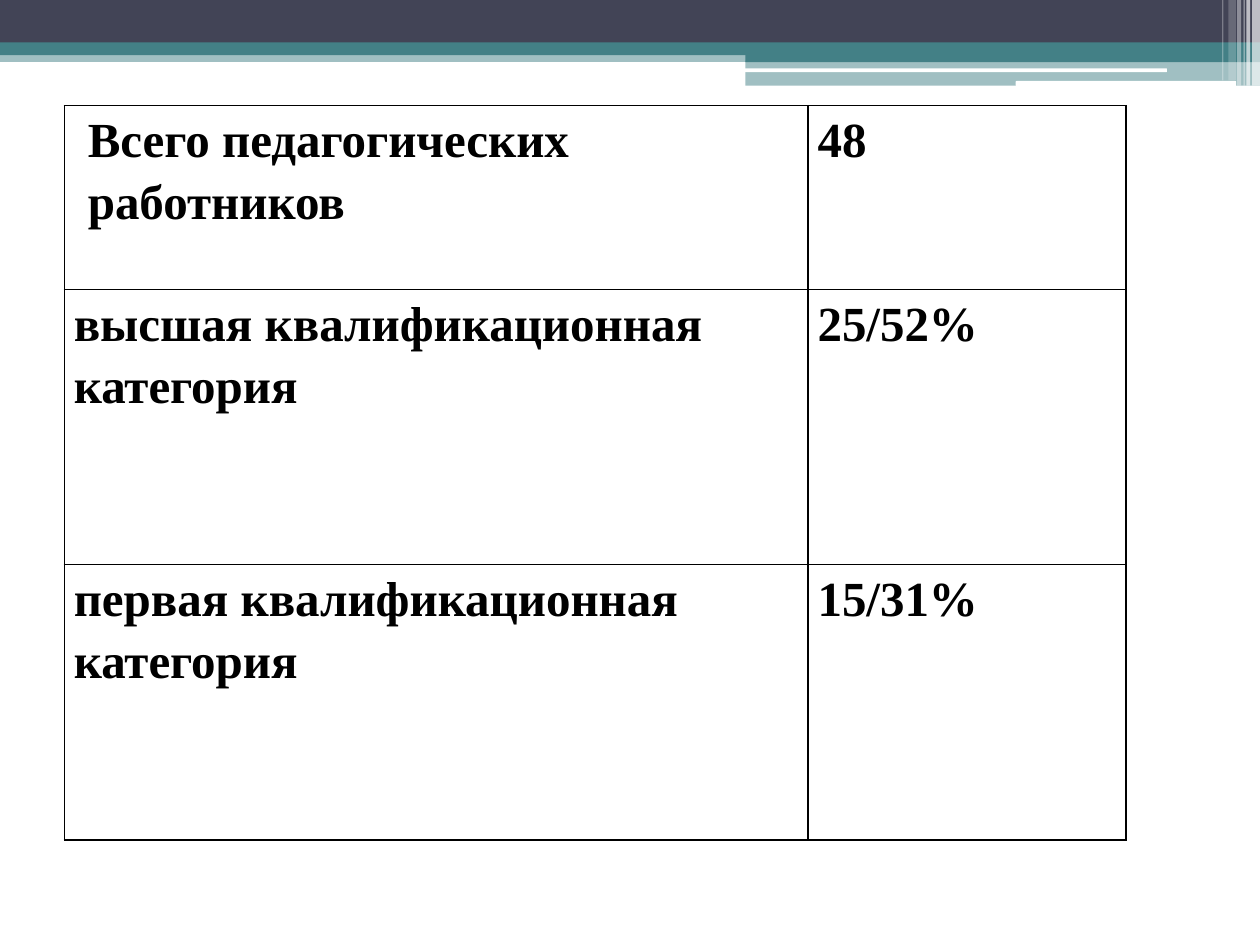
from lxml.etree import SubElement
from pptx import Presentation
from pptx.dml.color import RGBColor
from pptx.enum.shapes import MSO_SHAPE
from pptx.oxml.ns import qn
from pptx.util import Pt

SLATE, TEAL, WHITE, BLACK = "424456", "438086", "FFFFFF", "000000"


def paint(fill, color, opacity=100):
    """Fill with a solid colour at the given opacity in percent."""
    fill.solid()
    fill.fore_color.rgb = RGBColor.from_string(color)
    if opacity < 100:
        color_element = fill._xPr.find(qn("a:solidFill"))[0]
        SubElement(color_element, qn("a:alpha"), val=str(opacity * 1000))


def add_borders(cell, color, width):
    properties = cell._tc.get_or_add_tcPr()
    for index, side in enumerate(("lnL", "lnR", "lnT", "lnB")):
        line = SubElement(properties, qn(f"a:{side}"), w=str(Pt(width)))
        solid = SubElement(line, qn("a:solidFill"))
        SubElement(solid, qn("a:srgbClr"), val=color)
        properties.insert(index, line)  # borders precede the fill


presentation = Presentation()
presentation.slide_width, presentation.slide_height = Pt(720), Pt(540)
slide = presentation.slides.add_slide(presentation.slide_layouts[6])

# Header bands and the fading stripes in the right corner
RECTANGLE, ROUNDED = MSO_SHAPE.RECTANGLE, MSO_SHAPE.ROUNDED_RECTANGLE
header_parts = [
    (RECTANGLE, 0, 28.8, 720, 6.6, TEAL, 50),
    (RECTANGLE, 0, 0, 720, 24.5, SLATE, 100),
    (RECTANGLE, 0, 24.3, 720, 7.2, TEAL, 100),
    (RECTANGLE, 426, 28.4, 294, 7.1, TEAL, 100),
    (RECTANGLE, 426, 34.7, 294, 14.2, TEAL, 50),
    (ROUNDED, 425.6, 39.1, 241.2, 2.2, WHITE, 100),
    (ROUNDED, 580.4, 46.3, 126, 2.9, WHITE, 100),
    (RECTANGLE, 715.5, 0, 4.5, 49, WHITE, 65),
    (RECTANGLE, 712.2, 0, 2.2, 49, WHITE, 65),
    (RECTANGLE, 710.6, 0, 0.7, 49, WHITE, 60),
    (RECTANGLE, 707, 0, 2.2, 49, WHITE, 40),
    (RECTANGLE, 702, 0, 4.3, 46, WHITE, 20),
    (RECTANGLE, 698.4, 0, 0.7, 46, WHITE, 30),
]
for kind, left, top, width, height, color, opacity in header_parts:
    shape = slide.shapes.add_shape(kind, Pt(left), Pt(top), Pt(width), Pt(height))
    shape.shadow.inherit = False
    shape.line.fill.background()
    paint(shape.fill, color, opacity)

# Staff categories
staff = [
    ("Всего педагогических работников", "48"),
    ("высшая квалификационная категория", "25/52%"),
    ("первая квалификационная категория", "15/31%"),
]
column_widths = (425, 181.6)
row_heights = (104.9, 157.4, 157.4)
frame = slide.shapes.add_table(len(staff), 2, Pt(36.8), Pt(60.4),
                               Pt(sum(column_widths)), Pt(sum(row_heights)))
table = frame.table
table.first_row = table.horz_banding = False
for column, width in zip(table.columns, column_widths):
    column.width = Pt(width)
for row, height, texts in zip(table.rows, row_heights, staff):
    row.height = Pt(height)
    for cell, text in zip(row.cells, texts):
        cell.fill.background()
        add_borders(cell, BLACK, 1)
        cell.margin_left = cell.margin_right = Pt(5.4)
        cell.margin_top = cell.margin_bottom = 0
        cell.text_frame.text = text
        paragraph = cell.text_frame.paragraphs[0]
        paragraph.line_spacing = 1.15
        paragraph.space_after = Pt(10)
        font = paragraph.runs[0].font
        font.name, font.size, font.bold = "Times New Roman", Pt(28), True
        paint(font.fill, BLACK)

total_properties = table.cell(0, 0).text_frame.paragraphs[0]._p.get_or_add_pPr()
total_properties.set("marL", str(Pt(8)))

presentation.save("out.pptx")
